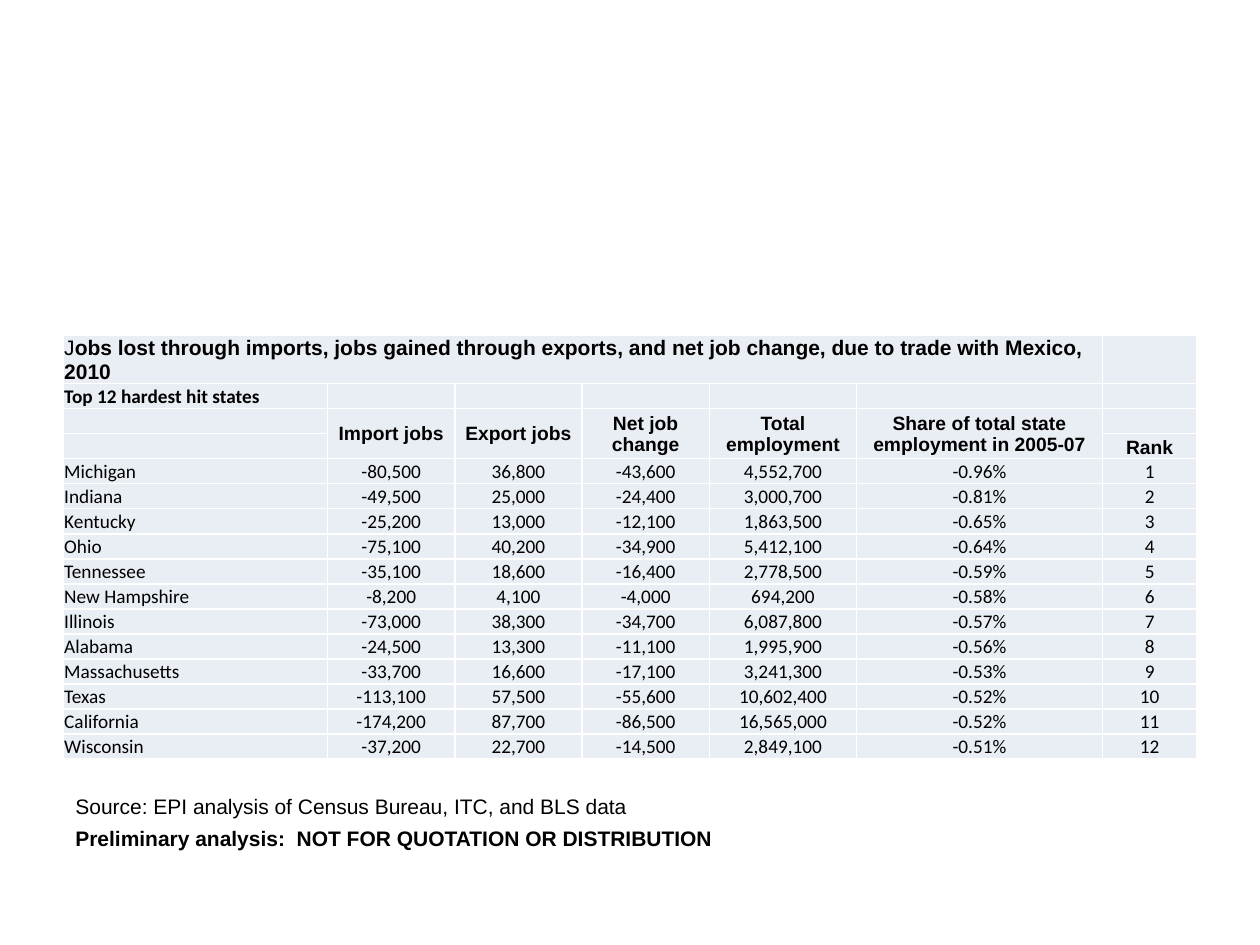
"""Build a slide with a table of the states hit hardest by trade with Mexico."""
from dataclasses import dataclass
from typing import NamedTuple

from lxml.etree import SubElement
from pptx import Presentation
from pptx.dml.color import RGBColor
from pptx.enum.text import MSO_ANCHOR as Anchor, MSO_AUTO_SIZE as AutoSize, PP_ALIGN as Align
from pptx.oxml import parse_xml
from pptx.oxml.ns import nsdecls, qn
from pptx.util import Inches, Pt


@dataclass(frozen=True)
class Theme:
    """Colours, fonts and type sizes of the slide."""
    ink: str = "000000"
    band: str = "E9EDF4"
    rule: str = "FFFFFF"
    heading: str = "Arial"
    body: str = "Calibri"
    large: int = 12
    small: int = 11


class Span(NamedTuple):
    """A run of text with its own format."""
    text: str
    font: str
    size: int
    bold: bool = False


class Entry(NamedTuple):
    """The content of one table cell, with the rows and columns it covers."""
    row: int
    column: int
    spans: list[Span]
    align: Align = Align.CENTER
    anchor: Anchor = Anchor.BOTTOM
    rows: int = 1
    columns: int = 1


class Note(NamedTuple):
    """A line of text below the table, placed in grid units."""
    left: float
    top: float
    width: float
    height: float
    span: Span


THEME = Theme()
UNIT = 0.25
GRID_COLUMNS, GRID_ROWS = 40, 30
TABLE_LEFT, TABLE_TOP = 2, 10.64
COLUMN_WIDTHS = (8.4, 4.04, 4.04, 4.04, 4.68, 7.8, 3)
TITLE_HEIGHT, ROW_HEIGHT = 0.84, 0.78
FIRST_STATE_ROW = 4

HEADERS = ("Import jobs", "Export jobs", "Net job change", "Total employment",
           "Share of total state employment in 2005-07")
STATES = (
    ("Michigan", "-80,500", "36,800", "-43,600", "4,552,700", "-0.96%"),
    ("Indiana", "-49,500", "25,000", "-24,400", "3,000,700", "-0.81%"),
    ("Kentucky", "-25,200", "13,000", "-12,100", "1,863,500", "-0.65%"),
    ("Ohio", "-75,100", "40,200", "-34,900", "5,412,100", "-0.64%"),
    ("Tennessee", "-35,100", "18,600", "-16,400", "2,778,500", "-0.59%"),
    ("New Hampshire", "-8,200", "4,100", "-4,000", "694,200", "-0.58%"),
    ("Illinois", "-73,000", "38,300", "-34,700", "6,087,800", "-0.57%"),
    ("Alabama", "-24,500", "13,300", "-11,100", "1,995,900", "-0.56%"),
    ("Massachusetts", "-33,700", "16,600", "-17,100", "3,241,300", "-0.53%"),
    ("Texas", "-113,100", "57,500", "-55,600", "10,602,400", "-0.52%"),
    ("California", "-174,200", "87,700", "-86,500", "16,565,000", "-0.52%"),
    ("Wisconsin", "-37,200", "22,700", "-14,500", "2,849,100", "-0.51%"),
)
NOTES = (
    Note(2, 26, 28, 1.2, Span("Preliminary analysis:  NOT FOR QUOTATION OR DISTRIBUTION",
                              THEME.heading, THEME.large, True)),
    Note(2, 25, 21, 1.2, Span("Source: EPI analysis of Census Bureau, ITC, and BLS data",
                              THEME.heading, THEME.large)),
)


def grid(units: float) -> int:
    """Turn grid units into a slide length."""
    return Inches(units * UNIT)


def apply(target, values: dict) -> None:
    """Set each named attribute on the target."""
    for name, value in values.items():
        setattr(target, name, value)


def write(para, spans: list[Span]) -> None:
    """Add formatted runs to a paragraph."""
    for span in spans:
        run = para.add_run()
        run.text = span.text
        apply(run.font, {"name": span.font, "size": Pt(span.size), "bold": span.bold})
        run.font.color.rgb = RGBColor.from_string(THEME.ink)


def style_cell(cell) -> None:
    """Give a cell its fill, margins, white rules and resting type size."""
    apply(cell, {"margin_left": Inches(0.01), "margin_right": Inches(0.01),
                 "margin_top": Inches(0.01), "margin_bottom": 0})
    cell.fill.solid()
    cell.fill.fore_color.rgb = RGBColor.from_string(THEME.band)
    properties = cell._tc.get_or_add_tcPr()
    for place, side in enumerate("LRTB"):
        properties.insert(place, parse_xml(
            f'<a:ln{side} {nsdecls("a")} w="{Pt(1)}"><a:solidFill>'
            f'<a:srgbClr val="{THEME.rule}"/></a:solidFill></a:ln{side}>'))
    ending = SubElement(cell.text_frame.paragraphs[0]._p, qn("a:endParaRPr"))
    ending.set("sz", str(THEME.small * 100))


def table_entries() -> list[Entry]:
    """List the title, headers and state figures as cell entries."""
    title = [Span("J", THEME.heading, THEME.large),
             Span("obs lost through imports, jobs gained through exports, and net job change, "
                  "due to trade with Mexico, 2010", THEME.heading, THEME.large, True)]
    subtitle = [Span("Top 12 hardest hit states", THEME.body, THEME.small, True)]
    entries = [Entry(0, 0, title, Align.LEFT, columns=6), Entry(1, 0, subtitle, Align.LEFT),
               Entry(3, 6, [Span("Rank", THEME.heading, THEME.small, True)])]
    entries += [Entry(2, column, [Span(text, THEME.heading, THEME.small, True)],
                      anchor=Anchor.MIDDLE, rows=2)
                for column, text in enumerate(HEADERS, 1)]
    for rank, state in enumerate(STATES, 1):
        for column, text in enumerate((*state, str(rank))):
            entries.append(Entry(FIRST_STATE_ROW + rank - 1, column,
                                 [Span(text, THEME.body, THEME.small)],
                                 Align.CENTER if column else Align.LEFT))
    return entries


def draw_table(page) -> None:
    """Draw the state table."""
    count = FIRST_STATE_ROW + len(STATES)
    heights = (TITLE_HEIGHT, *[ROW_HEIGHT] * (count - 1))
    frame = page.shapes.add_table(count, len(COLUMN_WIDTHS), grid(TABLE_LEFT), grid(TABLE_TOP),
                                  grid(sum(COLUMN_WIDTHS)), grid(sum(heights)))
    table = frame.table
    apply(table, {"first_row": False, "horz_banding": False})
    for column, width in zip(table.columns, COLUMN_WIDTHS):
        column.width = grid(width)
    for row, height in zip(table.rows, heights):
        row.height = grid(height)
    for cell in table.iter_cells():
        style_cell(cell)
    for entry in table_entries():
        cell = table.cell(entry.row, entry.column)
        if entry.rows * entry.columns > 1:
            cell.merge(table.cell(entry.row + entry.rows - 1, entry.column + entry.columns - 1))
        cell.vertical_anchor = entry.anchor
        para = cell.text_frame.paragraphs[0]
        para.alignment = entry.align
        write(para, entry.spans)


def draw_note(page, note: Note) -> None:
    """Draw one line of text below the table."""
    box = page.shapes.add_textbox(*map(grid, note[:4]))
    apply(box.text_frame, {"word_wrap": True, "auto_size": AutoSize.SHAPE_TO_FIT_TEXT})
    write(box.text_frame.paragraphs[0], [note.span])


def main() -> None:
    """Build and save the deck."""
    deck = Presentation()
    apply(deck, {"slide_width": grid(GRID_COLUMNS), "slide_height": grid(GRID_ROWS)})
    page = deck.slides.add_slide(deck.slide_layouts[6])
    draw_table(page)
    for note in NOTES:
        draw_note(page, note)
    deck.save("out.pptx")


if __name__ == "__main__":
    main()
